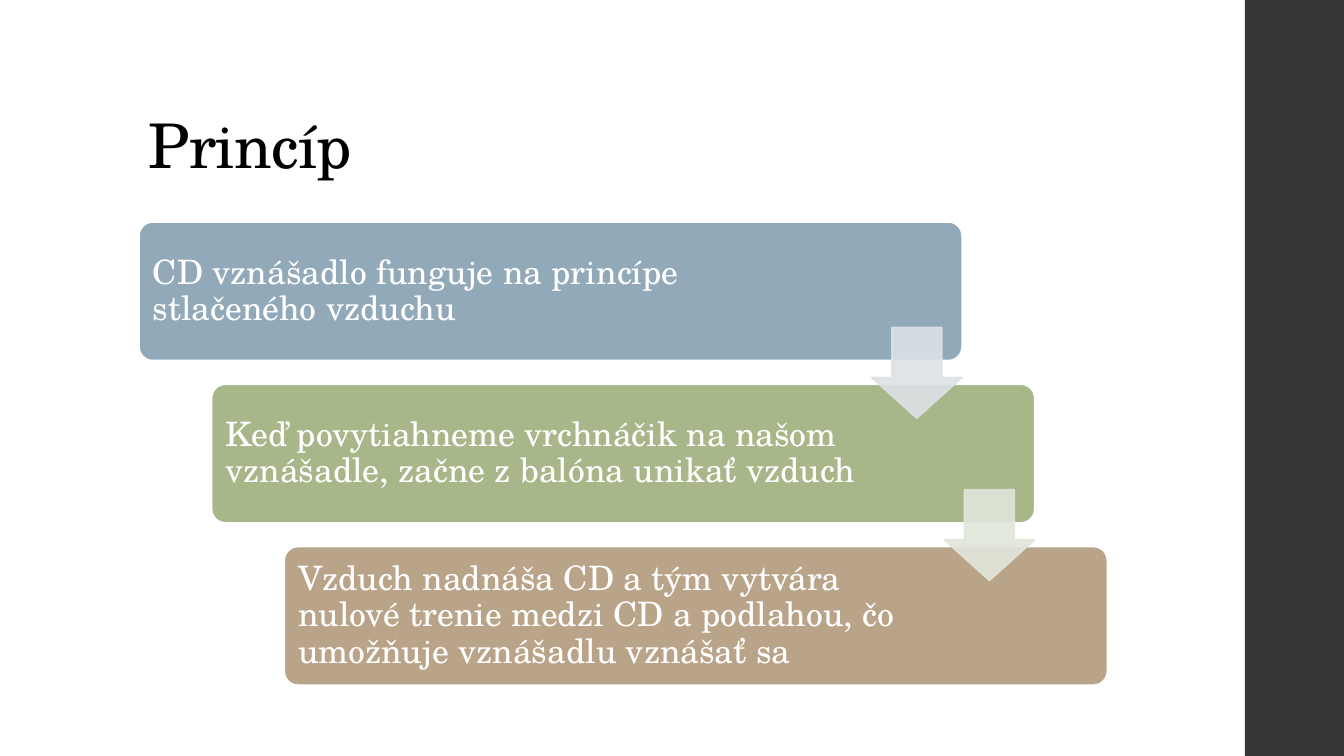
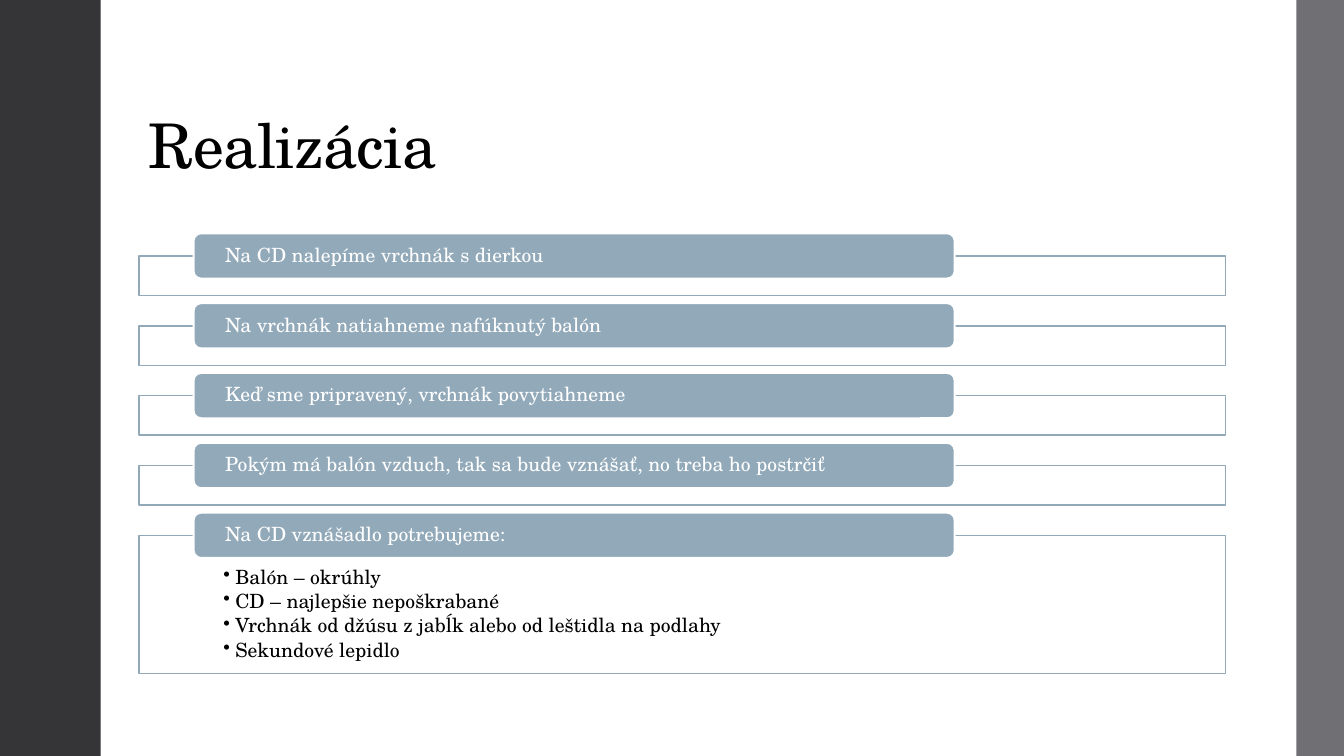
from dataclasses import dataclass

import pptx
import pptx.dml.color
import pptx.enum.shapes
import pptx.enum.text
import pptx.oxml
import pptx.oxml.ns
import pptx.presentation
import pptx.shapes.autoshape
import pptx.slide
import pptx.text.text
import pptx.util

Cm = pptx.util.Cm
Pt = pptx.util.Pt
Kind = pptx.enum.shapes.MSO_SHAPE
Anchor = pptx.enum.text.MSO_ANCHOR
Shape = pptx.shapes.autoshape.Shape
Slide = pptx.slide.Slide

FONT = "TeX Gyre Schola"
WHITE, BLACK, DARK, GREY = "FFFFFF", "000000", "353537", "6F6F74"
BLUE, GREEN, BROWN = "92A9B9", "A7B789", "B9A489"
WIDE, HIGH = 33.87, 19.05
LEFT = 3.5


@dataclass
class Box:
    """Place and size in centimetres."""
    x: float
    y: float
    w: float
    h: float

    def spans(self) -> list[int]:
        return [Cm(n) for n in (self.x, self.y, self.w, self.h)]


@dataclass
class Step:
    text: str
    fill: str
    inset: float
    arrow: str = ""


@dataclass
class Task:
    text: str
    items: tuple[str, ...] = ()
    high: float = 1.0


STEPS = [
    Step("CD vznášadlo funguje na princípe stlačeného vzduchu", BLUE, 3.84, "DCE2E6"),
    Step("Keď povytiahneme vrchnáčik na našom vznášadle, začne z balóna unikať vzduch",
         GREEN, 4.37, "E1E6DA"),
    Step("Vzduch nadnáša CD a tým vytvára nulové trenie medzi CD a podlahou, "
         "čo umožňuje vznášadlu vznášať sa", BROWN, 4.37),
]

TASKS = [
    Task("Na CD nalepíme vrchnák s dierkou"),
    Task("Na vrchnák natiahneme nafúknutý balón"),
    Task("Keď sme pripravený, vrchnák povytiahneme"),
    Task("Pokým má balón vzduch, tak sa bude vznášať, no treba ho postrčiť"),
    Task("Na CD vznášadlo potrebujeme:",
         ("Balón – okrúhly", "CD – najlepšie nepoškrabané",
          "Vrchnák od džúsu z jabĺk alebo od leštidla na podlahy", "Sekundové lepidlo"), 3.48),
]


def color(code: str) -> pptx.dml.color.RGBColor:
    return pptx.dml.color.RGBColor.from_string(code)


def draw(slide: Slide, kind: Kind, box: Box, fill: str,
         line: str = "", width: float = 1.35) -> Shape:
    shape = slide.shapes.add_shape(kind, *box.spans())
    shape.shadow.inherit = False
    shape.fill.solid()
    shape.fill.fore_color.rgb = color(fill)
    if line:
        shape.line.color.rgb = color(line)
        shape.line.width = Pt(width)
    else:
        shape.line.fill.background()
    return shape


def fade(shape: Shape, share: int) -> None:
    """Set the opacity of fill and line in percent."""
    for node in shape._element.spPr.iter(pptx.oxml.ns.qn("a:srgbClr")):
        alpha = pptx.oxml.parse_xml(f'<a:alpha {pptx.oxml.ns.nsdecls("a")} val="{share * 1000}"/>')
        node.append(alpha)


def write(shape: Shape, lines: tuple[str, ...], size: float, ink: str, anchor: Anchor,
          insets: tuple[float, float, float, float], gap: float = 0) -> pptx.text.text.TextFrame:
    """Fill a shape with left-aligned lines; insets run left, top, right, bottom."""
    frame = shape.text_frame
    frame.word_wrap = True
    frame.vertical_anchor = anchor
    (frame.margin_left, frame.margin_top,
     frame.margin_right, frame.margin_bottom) = map(Cm, insets)
    for i, line in enumerate(lines):
        para = frame.add_paragraph() if i else frame.paragraphs[0]
        para.alignment = pptx.enum.text.PP_ALIGN.LEFT
        para.line_spacing = 0.9
        para.space_after = Pt(gap)
        run = para.add_run()
        run.text = line
        run.font.name = FONT
        run.font.size = Pt(size)
        run.font.color.rgb = color(ink)
    return frame


def bullet(frame: pptx.text.text.TextFrame, indent: float) -> None:
    for para in frame.paragraphs:
        props = para._p.get_or_add_pPr()
        props.set("marL", str(Cm(indent)))
        props.set("indent", str(-Cm(indent)))
        mark = pptx.oxml.parse_xml(f'<a:buChar {pptx.oxml.ns.nsdecls("a")} char="•"/>')
        props.append(mark)


def band(slide: Slide, x: float, width: float, fill: str) -> None:
    draw(slide, Kind.RECTANGLE, Box(x, 0, width, HIGH), fill)


def title(slide: Slide, text: str) -> None:
    shape = slide.shapes.add_textbox(*Box(LEFT, 1.02, 27.38, 3.68).spans())
    frame = write(shape, (text,), 44, BLACK, Anchor.BOTTOM, (0.25, 0.13, 0.25, 0.13))
    frame.paragraphs[0].runs[0]._r.get_or_add_rPr().set("spc", "-50")


def stairs(slide: Slide) -> None:
    boxes = [Box(LEFT + 1.83 * i, 5.59 + 4.09 * i, 20.75, 3.5) for i in range(len(STEPS))]
    for step, box in zip(STEPS, boxes):
        card = draw(slide, Kind.ROUNDED_RECTANGLE, box, step.fill, WHITE)
        card.adjustments[0] = 0.1
        write(card, (step.text,), 24, WHITE, Anchor.MIDDLE, (0.25, 0.25, step.inset, 0.25))
    side = 2.29
    for step, box in zip(STEPS, boxes):
        if step.arrow:
            place = Box(box.x + box.w - side, box.y + 2.66, side, side)
            arrow = draw(slide, Kind.DOWN_ARROW, place, step.arrow, step.arrow, 1.1)
            arrow.adjustments[0] = 0.55
            arrow.adjustments[1] = 0.45
            fade(arrow, 90)


def tasks(slide: Slide) -> None:
    tall = 1.14
    for i, task in enumerate(TASKS):
        top = 6.45 + 1.76 * i
        panel = draw(slide, Kind.RECTANGLE, Box(LEFT, top, 27.38, task.high), WHITE, BLUE, 1.1)
        if task.items:
            frame = write(panel, task.items, 14, BLACK, Anchor.TOP,
                          (2.13, 0.81, 2.13, 0.28), 2.2)
            bullet(frame, 0.3)
        pill = draw(slide, Kind.ROUNDED_RECTANGLE,
                    Box(4.88, top - tall / 2, 19.18, tall), BLUE, WHITE)
        write(pill, (task.text,), 14, WHITE, Anchor.MIDDLE, (0.74, 0, 0.74, 0))


def blank(deck: pptx.presentation.Presentation) -> Slide:
    return deck.slides.add_slide(deck.slide_layouts[6])


def main() -> None:
    deck = pptx.Presentation()
    deck.slide_width, deck.slide_height = Cm(WIDE), Cm(HIGH)

    slide = blank(deck)
    band(slide, 31.37, 2.5, DARK)
    title(slide, "Princíp")
    stairs(slide)

    slide = blank(deck)
    band(slide, 0, 2.54, DARK)
    band(slide, 32.67, 1.2, GREY)
    title(slide, "Realizácia")
    tasks(slide)

    deck.save("out.pptx")


if __name__ == "__main__":
    main()
